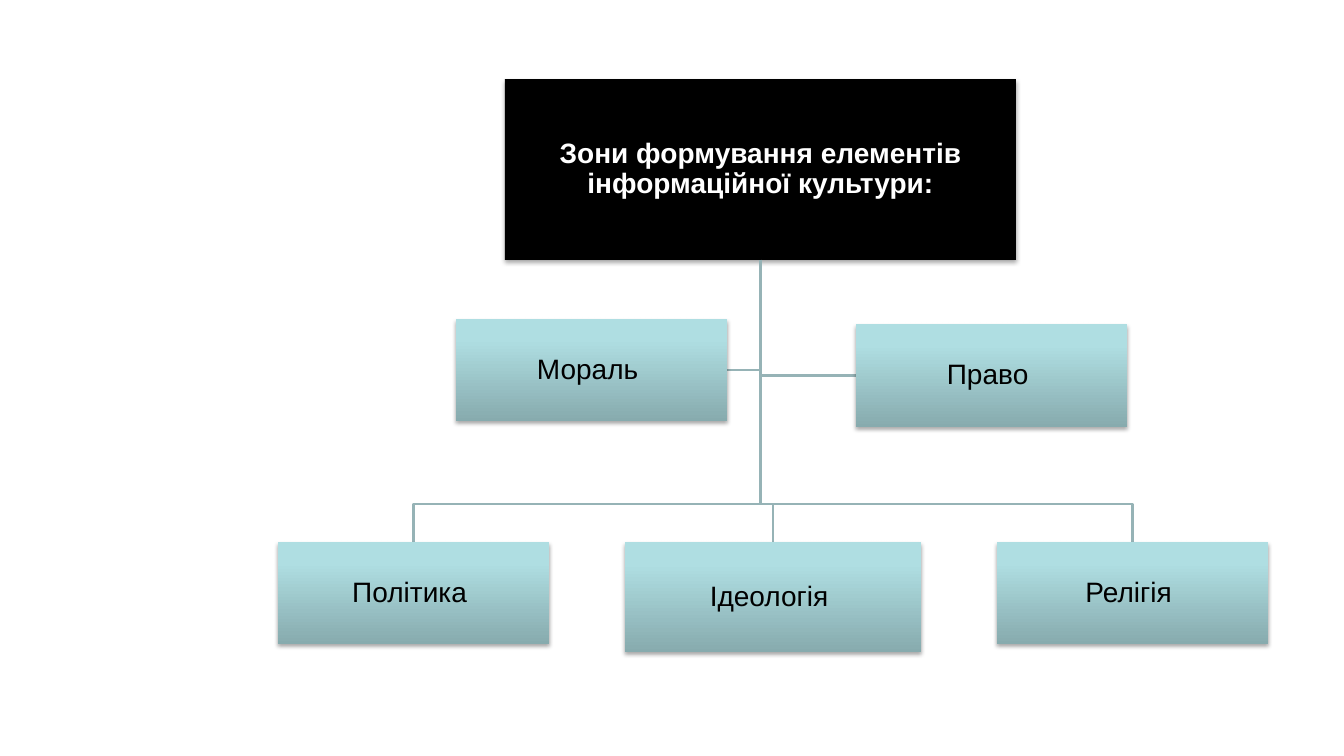
from copy import deepcopy

from lxml.etree import SubElement
from pptx import Presentation
from pptx.dml.color import RGBColor
from pptx.enum.shapes import MSO_SHAPE
from pptx.enum.text import MSO_ANCHOR, PP_ALIGN
from pptx.oxml.ns import qn
from pptx.util import Pt

PX = 914400 / 100.8
BLACK = RGBColor(0x00, 0x00, 0x00)
WHITE = RGBColor(0xFF, 0xFF, 0xFF)
LINE_TEAL = RGBColor(0x96, 0xB3, 0xB6)
GRADIENT = [
    (0, RGBColor(0x87, 0xAB, 0xAE)),
    (0.8, RGBColor(0xAF, 0xDE, 0xE2)),
    (1, RGBColor(0xAF, 0xE0, 0xE4)),
]

ROOT = (505, 79, 511, 181)
SIDE_BOXES = [
    ("Мораль ", 456, 319, 271, 102),
    ("Право ", 856, 324, 271, 103),
]
BOTTOM_BOXES = [
    ("Політика ", 278, 542, 271, 102),
    ("Ідеологія ", 625, 542, 296, 110),
    ("Релігія ", 997, 542, 271, 102),
]
BUS_Y = 504


def px(value):
    return round(value * PX)


def finish_box(box, text, color, bold):
    """Add the soft shadow and the centred label that every box shares."""
    box.line.fill.background()
    box.shadow.inherit = False
    effects = box._element.spPr.find(qn("a:effectLst"))
    shadow = SubElement(effects, qn("a:outerShdw"), blurRad="40000",
                        dist="23000", dir="5400000", rotWithShape="0")
    shadow_color = SubElement(shadow, qn("a:srgbClr"), val="000000")
    SubElement(shadow_color, qn("a:alpha"), val="35000")

    frame = box.text_frame
    frame.text = text
    frame_format = {"word_wrap": True, "vertical_anchor": MSO_ANCHOR.MIDDLE}
    for side in ("left", "top", "right", "bottom"):
        frame_format[f"margin_{side}"] = px(1)
    para = frame.paragraphs[0]
    para_format = {"alignment": PP_ALIGN.CENTER, "line_spacing": 0.9}
    font = para.runs[0].font
    font_format = {"name": "Arial", "size": Pt(20), "bold": bold}
    for target, values in ((frame, frame_format), (para, para_format), (font, font_format)):
        for name, value in values.items():
            setattr(target, name, value)
    font.color.rgb = color


deck = Presentation()
deck.slide_width, deck.slide_height = px(1344), px(756)
page = deck.slides.add_slide(deck.slide_layouts[5])

# Root box
root = page.shapes.title
root.left, root.top, root.width, root.height = map(px, ROOT)
root.fill.solid()
root.fill.fore_color.rgb = BLACK
finish_box(root, "Зони формування елементів інформаційної культури:", WHITE, True)

# Branches from the root to each box
root_left, root_top, root_width, root_height = ROOT
spine_x = root_left + root_width / 2
root_bottom = root_top + root_height
branches = []
for _, left, top, width, height in SIDE_BOXES:
    middle = top + height / 2
    near_edge = left if left > spine_x else left + width
    branches.append([(spine_x, middle), (near_edge, middle)])
for _, left, top, width, height in BOTTOM_BOXES:
    center = left + width / 2
    branches.append([(spine_x, BUS_Y), (center, BUS_Y), (center, top)])

for points in branches:
    builder = page.shapes.build_freeform(px(spine_x), px(root_bottom))
    builder.add_line_segments([(px(x), px(y)) for x, y in points], close=False)
    branch = builder.convert_to_shape()
    branch.shadow.inherit = False
    branch.fill.background()
    branch.line.color.rgb = LINE_TEAL
    branch.line.width = Pt(2)

# Zone boxes
for text, *place in BOTTOM_BOXES + SIDE_BOXES:
    box = page.shapes.add_shape(MSO_SHAPE.RECTANGLE, *map(px, place))
    box.fill.gradient()
    box.fill.gradient_angle = 90
    stop_list = box._element.spPr.find(".//" + qn("a:gsLst"))
    stop_list.append(deepcopy(stop_list[0]))
    for stop, (position, color) in zip(box.fill.gradient_stops, GRADIENT):
        stop.position = position
        stop.color.rgb = color
    finish_box(box, text, BLACK, False)

deck.save("out.pptx")
